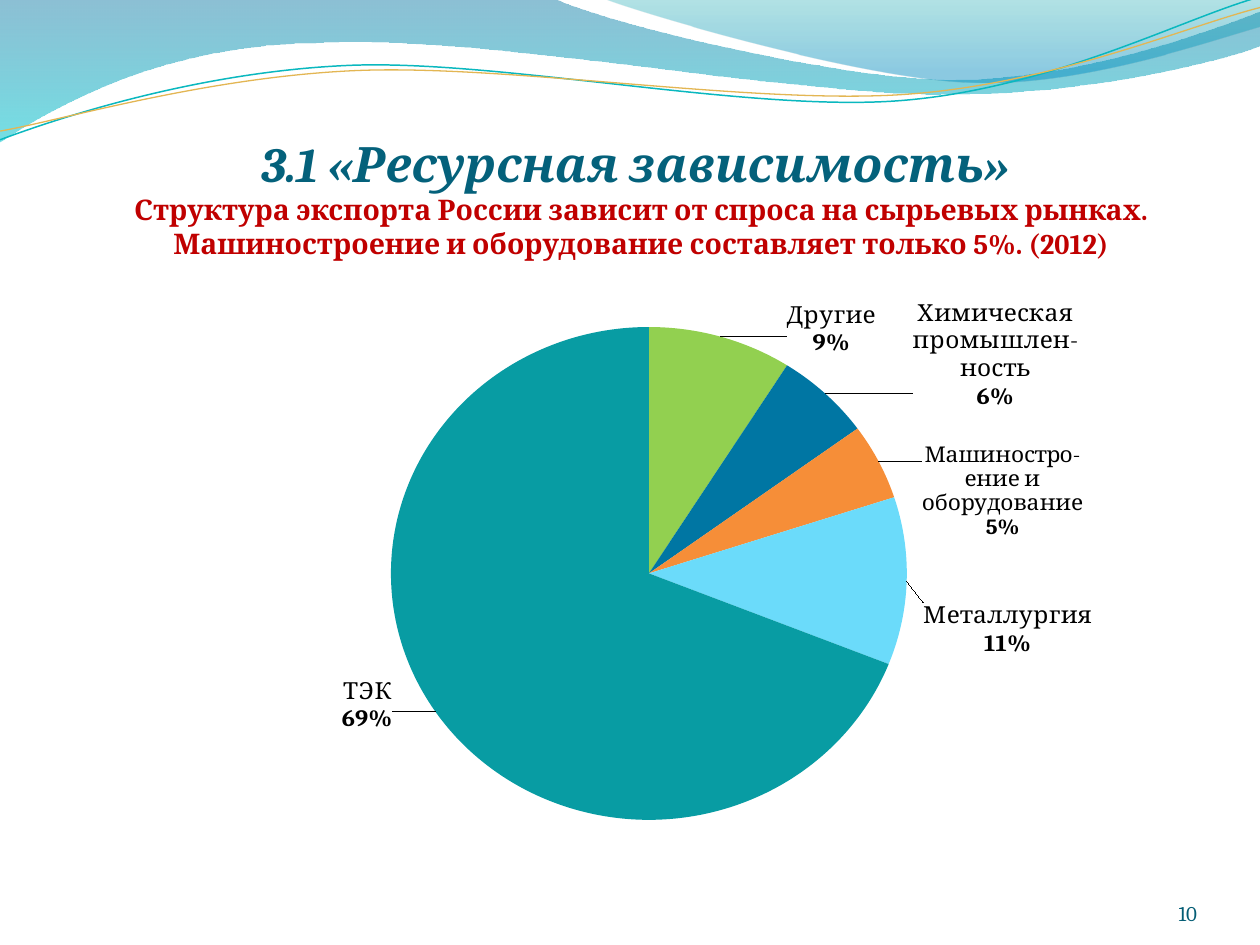
from pptx import Presentation
from pptx.chart.data import CategoryChartData
from pptx.dml.color import RGBColor
from pptx.enum.chart import XL_CHART_TYPE, XL_LABEL_POSITION
from pptx.enum.text import MSO_ANCHOR, PP_ALIGN
from pptx.oxml import parse_xml
from pptx.oxml.ns import nsdecls
from pptx.util import Pt

PIE = XL_CHART_TYPE.PIE
OUTER = XL_LABEL_POSITION.OUTSIDE_END
BOTTOM = MSO_ANCHOR.BOTTOM
CENTER, RIGHT = PP_ALIGN.CENTER, PP_ALIGN.RIGHT

BLACK = RGBColor(0x00, 0x00, 0x00)
NAVY = RGBColor(0x04, 0x61, 0x7B)
SLATE = RGBColor(0x04, 0x5D, 0x75)
RED = RGBColor(0xC0, 0x00, 0x00)
OCEAN = RGBColor(0x00, 0x74, 0xA1)
AQUA = RGBColor(0x00, 0xC6, 0xCF)
SEA = RGBColor(0x00, 0xA1, 0xA9)
SKY = RGBColor(0x00, 0x8B, 0xBF)
CYAN = RGBColor(0x0A, 0xB8, 0xBF)
GOLD = RGBColor(0xE3, 0xB6, 0x53)
GREEN = RGBColor(0x92, 0xD0, 0x50)
BLUE = RGBColor(0x00, 0x76, 0xA3)
ORANGE = RGBColor(0xF6, 0x8E, 0x38)
ICE = RGBColor(0x6B, 0xDB, 0xFA)
TEAL = RGBColor(0x08, 0x9C, 0xA3)

LEFT_WAVE = [
    (0, -0.7), (316.8, -0.7),
    (342.7, 12.2, 478.1, 45.4, 545.8, 45.4),
    (614.2, 45.4, 689.8, 18.7, 720, 6.5), (720.7, 25.9),
    (707.8, 31.7, 626.4, 54.7, 537.1, 54),
    (447.8, 54, 275, 20.2, 185, 24.5),
    (92.9, 25.2, 33.1, 59.8, -0.7, 81.4)]
RIGHT_WAVE = [
    (344.9, -0.7),
    (366.5, 7.9, 491, 44.6, 553.7, 46.8),
    (616.3, 49.7, 691.9, 23, 720, 15.1), (720, 0)]
CYAN_LINE = [
    (0, 79.9),
    (34.6, 67, 113.8, 41, 199.4, 37.4),
    (284.4, 33.8, 427, 64.1, 513.4, 57.6),
    (599.8, 51.1, 675.4, 10.8, 718.6, -1.4)]
GOLD_LINE = [
    (0, 74.9),
    (33.8, 69.1, 118.1, 43.9, 203.8, 40.3),
    (290.2, 36.7, 429.8, 59.8, 516.2, 54),
    (601.9, 48.2, 677.5, 15.1, 720, 4.3)]

SLICES = [
    ("Другие", 0.09, GREEN, 14, "Другие", 0.07, 0.05),
    ("Химическая промышленность", 0.06, BLUE, 14,
     "Химическая\nпромышлен-\nность", 0.09, 0.04),
    ("Машиностроение и оборудование", 0.05, ORANGE, 13,
     "Машиностро-\nение и\nоборудование", 0.04, 0.15),
    ("Металлургия", 0.11, ICE, 14, "Металлургия", 0.01, 0.09),
    ("ТЭК", 0.69, TEAL, 14, "ТЭК", -0.04, -0.07)]

WIDE = ('<c:extLst {}><c:ext uri="{{CE6537A1-D6FC-4f65-9D91-7224C49458BB}}" '
        'xmlns:c15="http://schemas.microsoft.com/office/drawing/2012/chart">'
        '<c15:layout><c:manualLayout><c:w val="0.2"/><c:h val="0.1"/>'
        '</c:manualLayout></c15:layout></c:ext></c:extLst>')


def layout(**marks):
    """Return a manual chart layout element."""
    parts = "".join(f'<c:{name} val="{val}"/>' for name, val in marks.items())
    return parse_xml(f'<c:layout {nsdecls("c")}><c:manualLayout>{parts}'
                     '</c:manualLayout></c:layout>')


class Deck:
    """Holds the style and the current slide."""

    def __init__(self, face="Cambria"):
        self.face = face
        self.show = Presentation()
        self.show.slide_width, self.show.slide_height = Pt(720), Pt(540)
        self.slide = self.show.slides.add_slide(self.show.slide_layouts[5])

    def style(self, font, size, color, bold=False, italic=False):
        font.name, font.size = self.face, Pt(size)
        font.bold, font.italic = bold, italic
        font.color.rgb = color

    def frame(self, shape, foot=0):
        frame = shape.text_frame
        frame.word_wrap = True
        frame.vertical_anchor = BOTTOM
        frame.margin_left = frame.margin_right = frame.margin_top = 0
        frame.margin_bottom = Pt(foot)
        return frame.paragraphs[0]

    def curve(self, path, closed):
        spots = [(part[i] * 100, part[i + 1] * 100)
                 for part in path for i in range(0, len(part), 2)]
        pen = self.slide.shapes.build_freeform(*spots[0], scale=Pt(1) / 100)
        pen.add_line_segments(spots[1:], close=closed)
        shape = pen.convert_to_shape()
        shape.shadow.inherit = False
        steps = iter(shape._element.xpath(".//a:lnTo"))
        for part in path[1:]:
            step = next(steps)
            if len(part) == 6:
                bend = parse_xml(f'<a:cubicBezTo {nsdecls("a")}/>')
                step.addprevious(bend)
                for node in (step, next(steps), next(steps)):
                    bend.append(node[0])
                    node.getparent().remove(node)
        return shape

    def wave(self, path, stops):
        shape = self.curve(path, True)
        shape.line.fill.background()
        shape.fill.gradient()
        shape.fill.gradient_angle = 270
        for stop, (place, color, alpha) in zip(shape.fill.gradient_stops, stops):
            stop.position = place
            stop.color.rgb = color
            tint = stop._gs.find("{*}srgbClr")
            tint.append(parse_xml(f'<a:alpha {nsdecls("a")} val="{alpha * 1000}"/>'))

    def line(self, path, color, width):
        shape = self.curve(path, False)
        shape.fill.background()
        shape.line.color.rgb = color
        shape.line.width = Pt(width)

    def title(self, head, sub):
        shape = self.slide.shapes.title
        shape.left, shape.top = Pt(42.5), Pt(65.5)
        shape.width, shape.height = Pt(647.3), Pt(102.2)
        para = self.frame(shape, 19.2)
        para.alignment = CENTER
        run = para.add_run()
        run.text = head
        self.style(run.font, 27.9, NAVY, True, True)
        para.add_line_break()
        run = para.add_run()
        run.text = sub
        self.style(run.font, 16.2, RED, True)

    def number(self, text):
        box = self.slide.shapes.add_textbox(Pt(624), Pt(500.4), Pt(60), Pt(28.8))
        para = self.frame(box)
        para.text = text
        para.alignment = RIGHT
        self.style(para.font, 12, SLATE)

    def pie(self, slices):
        data = CategoryChartData(number_format="0%")
        data.categories = [row[0] for row in slices]
        data.add_series("Series 1", [row[1] for row in slices])
        chart = self.slide.shapes.add_chart(
            PIE, Pt(115.9), Pt(157), Pt(521.3), Pt(323.3), data).chart
        chart.has_title = chart.has_legend = False
        self.style(chart.font, 10, BLACK)
        area = chart._chartSpace.chart.plotArea
        for old in area.findall("{*}layout"):
            area.remove(old)
        area.insert(0, layout(layoutTarget="inner", xMode="edge", yMode="edge",
                              x=0.206, y=0.05, w=0.566, h=0.912))
        series = chart.plots[0].series[0]
        labels = series.data_labels
        labels.show_value = labels.show_category_name = True
        labels.number_format, labels.number_format_is_linked = "0%", False
        labels.position = OUTER
        self.style(labels.font, 9, BLACK)
        for spot, (_, share, color, size, text, _, _) in enumerate(slices):
            point = series.points[spot]
            point.format.fill.solid()
            point.format.fill.fore_color.rgb = color
            label = point.data_label
            frame = label.text_frame
            frame.text = f"{text}\n{share:.0%}"
            frame.word_wrap = False
            for para in frame.paragraphs:
                self.style(para.runs[0].font, size, BLACK, para.text.endswith("%"))
            label.position = OUTER
        for node, row in zip(series._element.xpath(".//c:dLbl"), slices):
            node.insert(1, layout(x=row[5], y=row[6]))
            if row[0] == "Металлургия":
                node.append(parse_xml(WIDE.format(nsdecls("c"))))

    def save(self):
        self.show.save("out.pptx")


def main():
    """Build the export slide."""
    deck = Deck()
    deck.wave(LEFT_WAVE, [(0, OCEAN, 45), (1, AQUA, 55)])
    deck.wave(RIGHT_WAVE, [(0, SEA, 30), (0.8, SKY, 45)])
    deck.line(CYAN_LINE, CYAN, 0.85)
    deck.line(GOLD_LINE, GOLD, 0.75)
    deck.title("3.1 «Ресурсная зависимость» ",
               "Структура экспорта России зависит от спроса на сырьевых рынках. "
               "Машиностроение и оборудование составляет только 5%. (2012)")
    deck.number("10")
    deck.pie(SLICES)
    deck.save()


if __name__ == "__main__":
    main()
